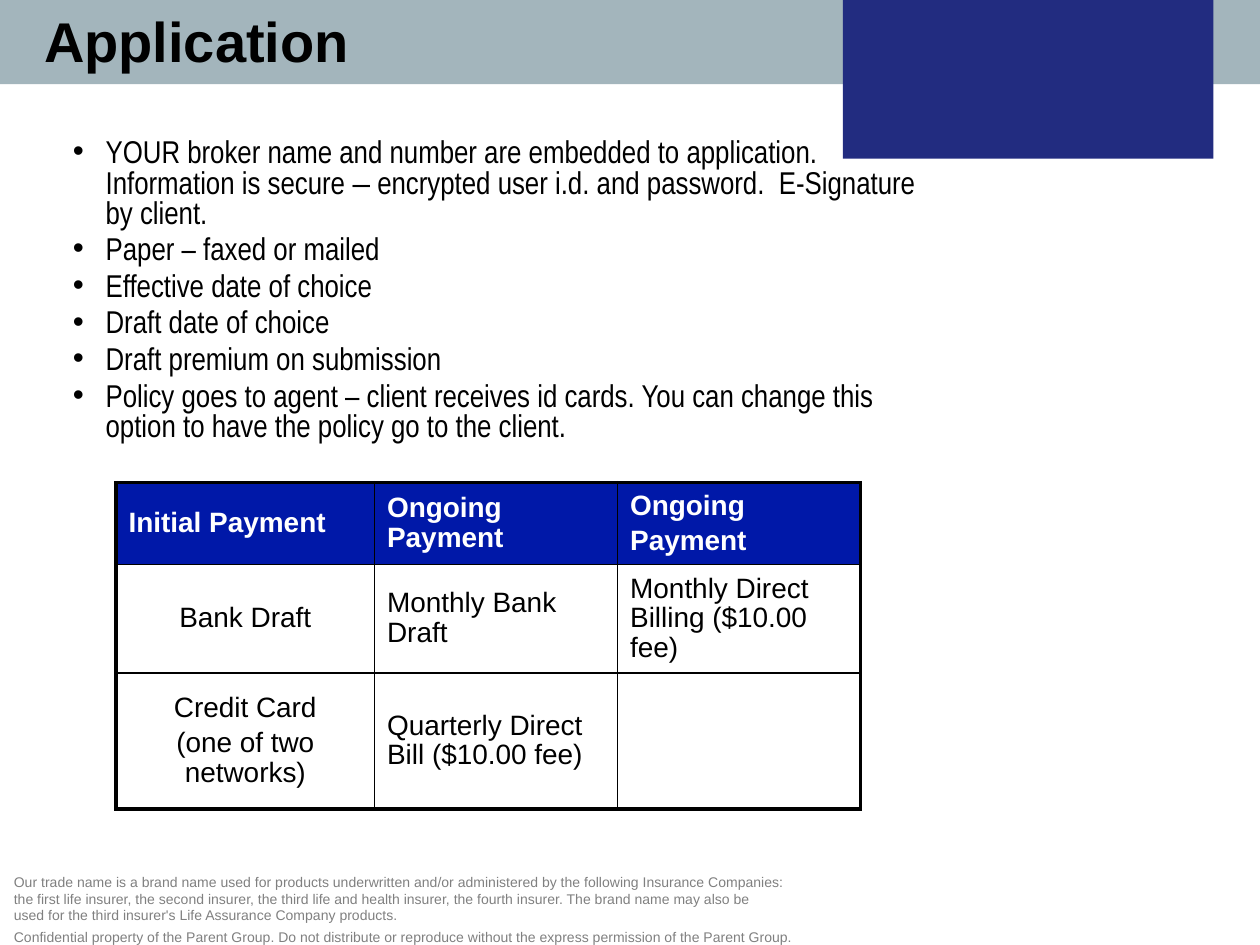
from dataclasses import dataclass

from lxml.etree import SubElement
from pptx import Presentation
from pptx.dml.color import RGBColor
from pptx.enum.shapes import MSO_SHAPE
from pptx.enum.text import MSO_ANCHOR, PP_ALIGN
from pptx.oxml.ns import qn
from pptx.util import Cm, Pt


@dataclass(frozen=True)
class Theme:
    """Colours, fonts and type sizes of the slide."""
    ink: str = "000000"
    paper: str = "FFFFFF"
    band: str = "A3B5BC"
    panel: str = "222C80"
    header: str = "0018A8"
    muted: str = "808080"
    sans: str = "Arial"
    narrow: str = "Arial Narrow"
    title_size: int = 32
    body_size: int = 18
    table_size: int = 16
    notice_size: int = 8
    inner_line: float = 1
    outer_line: float = 2.25


THEME = Theme()

BANDS = [
    ((0, 0, 25.4, 1.7), THEME.band),
    ((16.99, 0, 7.47, 3.2), THEME.panel),
]
TITLE = "Application"
POINTS = [
    [("YOUR broker name and number are embedded to application. Information is secure ", THEME.narrow),
     ("–", THEME.sans),
     (" encrypted user i.d. and password.  E-Signature by client.", THEME.narrow)],
    [("Paper – faxed or mailed", THEME.narrow)],
    [("Effective date of choice", THEME.narrow)],
    [("Draft date of choice", THEME.narrow)],
    [("Draft premium on submission", THEME.narrow)],
    [("Policy goes to agent – client receives id cards. You can change this option "
      "to have the policy go to the client.", THEME.narrow)],
]
PAYMENTS = [
    [["Initial Payment"], ["Ongoing Payment"], ["Ongoing", "Payment"]],
    [["Bank Draft"], ["Monthly Bank Draft"], ["Monthly Direct Billing ($10.00 fee)"]],
    [["Credit Card", "(one of two networks)"], ["Quarterly Direct Bill ($10.00 fee)"], []],
]
COLUMN_WIDTHS = [5.21, 4.9, 4.9]
ROW_HEIGHTS = [1.6, 2.03, 2.74]
CONFIDENTIAL = ["Confidential property of the Parent Group. Do not distribute or reproduce "
                "without the express permission of the Parent Group."]
UNDERWRITERS = [
    "Our trade name is a brand name used for products underwritten and/or administered "
    "by the following Insurance Companies:",
    "the first life insurer, the second insurer, the third life and health insurer, the fourth insurer. "
    "The brand name may also be",
    "used for the third insurer's Life Assurance Company products.",
]


def add_run(paragraph, text, size, color, font=THEME.sans, bold=False):
    """Append one formatted run to a paragraph."""
    run = paragraph.add_run()
    run.text = text
    run.font.name = font
    run.font.size = Pt(size)
    run.font.bold = bold
    run.font.color.rgb = RGBColor.from_string(color)


def paragraphs(frame, items):
    """Yield a paragraph of the frame with each item."""
    for index, item in enumerate(items):
        yield (frame.add_paragraph() if index else frame.paragraphs[0]), item


def space_out(paragraph, frame, line_spacing, size):
    """Set line spacing and a gap of a fifth of the type size between paragraphs."""
    paragraph.line_spacing = line_spacing
    first = len(frame.paragraphs) == 1
    paragraph.space_before = Pt(0 if first else size / 5)


def add_frame(slide, box):
    """Return the wrapping text frame of a new text box."""
    frame = slide.shapes.add_textbox(*map(Cm, box)).text_frame
    frame.word_wrap = True
    return frame


def add_bullet(paragraph):
    """Give a paragraph a hanging bullet."""
    properties = paragraph._p.get_or_add_pPr()
    properties.set("marL", str(Cm(0.66)))
    properties.set("indent", str(-Cm(0.66)))
    color = SubElement(properties, qn("a:buClr"))
    SubElement(color, qn("a:srgbClr"), val=THEME.ink)
    SubElement(properties, qn("a:buFont"), typeface=THEME.sans)
    SubElement(properties, qn("a:buChar"), char="•")


def add_borders(cell, outer_sides):
    """Draw thick lines on the outer sides of a cell and thin ones elsewhere."""
    properties = cell._tc.get_or_add_tcPr()
    for side in "LRTB":
        width = THEME.outer_line if side in outer_sides else THEME.inner_line
        line = SubElement(properties, qn(f"a:ln{side}"), w=str(Pt(width)))
        fill = SubElement(line, qn("a:solidFill"))
        SubElement(fill, qn("a:srgbClr"), val=THEME.ink)


def add_bands(slide):
    """Draw the header band and the corner panel."""
    for box, color in BANDS:
        band = slide.shapes.add_shape(MSO_SHAPE.RECTANGLE, *map(Cm, box))
        band.shadow.inherit = False
        band.fill.solid()
        band.fill.fore_color.rgb = RGBColor.from_string(color)
        band.line.fill.background()


def add_notice(slide, box, lines):
    """Write small print, one paragraph a line."""
    frame = add_frame(slide, box)
    for paragraph, line in paragraphs(frame, lines):
        add_run(paragraph, line, THEME.notice_size, THEME.muted)


def add_points(slide):
    """Write the bulleted list."""
    frame = add_frame(slide, (1.22, 2.69, 17.5, 7.19))
    for paragraph, runs in paragraphs(frame, POINTS):
        add_bullet(paragraph)
        space_out(paragraph, frame, 0.8, THEME.body_size)
        for text, font in runs:
            add_run(paragraph, text, THEME.body_size, THEME.ink, font)


def add_payments(slide):
    """Build the payment table."""
    last_row, last_column = len(ROW_HEIGHTS) - 1, len(COLUMN_WIDTHS) - 1
    table = slide.shapes.add_table(
        len(ROW_HEIGHTS), len(COLUMN_WIDTHS), Cm(2.34), Cm(9.73),
        Cm(sum(COLUMN_WIDTHS)), Cm(sum(ROW_HEIGHTS))).table
    table.first_row = table.horz_banding = False
    for column, width in zip(table.columns, COLUMN_WIDTHS):
        column.width = Cm(width)
    for row, height in zip(table.rows, ROW_HEIGHTS):
        row.height = Cm(height)
    for r, payment in enumerate(PAYMENTS):
        for c, lines in enumerate(payment):
            cell = table.cell(r, c)
            cell.vertical_anchor = MSO_ANCHOR.MIDDLE
            edges = {"L": c == 0, "R": c == last_column, "T": r == 0, "B": r == last_row}
            add_borders(cell, [side for side, outer in edges.items() if outer])
            heading = r == 0
            if heading:
                cell.fill.solid()
                cell.fill.fore_color.rgb = RGBColor.from_string(THEME.header)
            else:
                cell.fill.background()
            for paragraph, line in paragraphs(cell.text_frame, lines):
                space_out(paragraph, cell.text_frame, 0.95, THEME.table_size)
                centred = c == 0 and not heading
                paragraph.alignment = PP_ALIGN.CENTER if centred else PP_ALIGN.LEFT
                add_run(paragraph, line, THEME.table_size,
                        THEME.paper if heading else THEME.ink, bold=heading)


def main():
    """Build and save the slide."""
    deck = Presentation()
    deck.slide_width, deck.slide_height = Cm(25.4), Cm(19.05)
    slide = deck.slides.add_slide(deck.slide_layouts[6])
    add_bands(slide)
    add_notice(slide, (0.03, 18.59, 17.07, 0.61), CONFIDENTIAL)
    add_notice(slide, (0.03, 17.48, 16.51, 1.63), UNDERWRITERS)
    title = add_frame(slide, (0.64, 0, 19.33, 2.67))
    add_run(title.paragraphs[0], TITLE, THEME.title_size, THEME.ink, bold=True)
    add_points(slide)
    add_payments(slide)
    deck.save("out.pptx")


if __name__ == "__main__":
    main()
